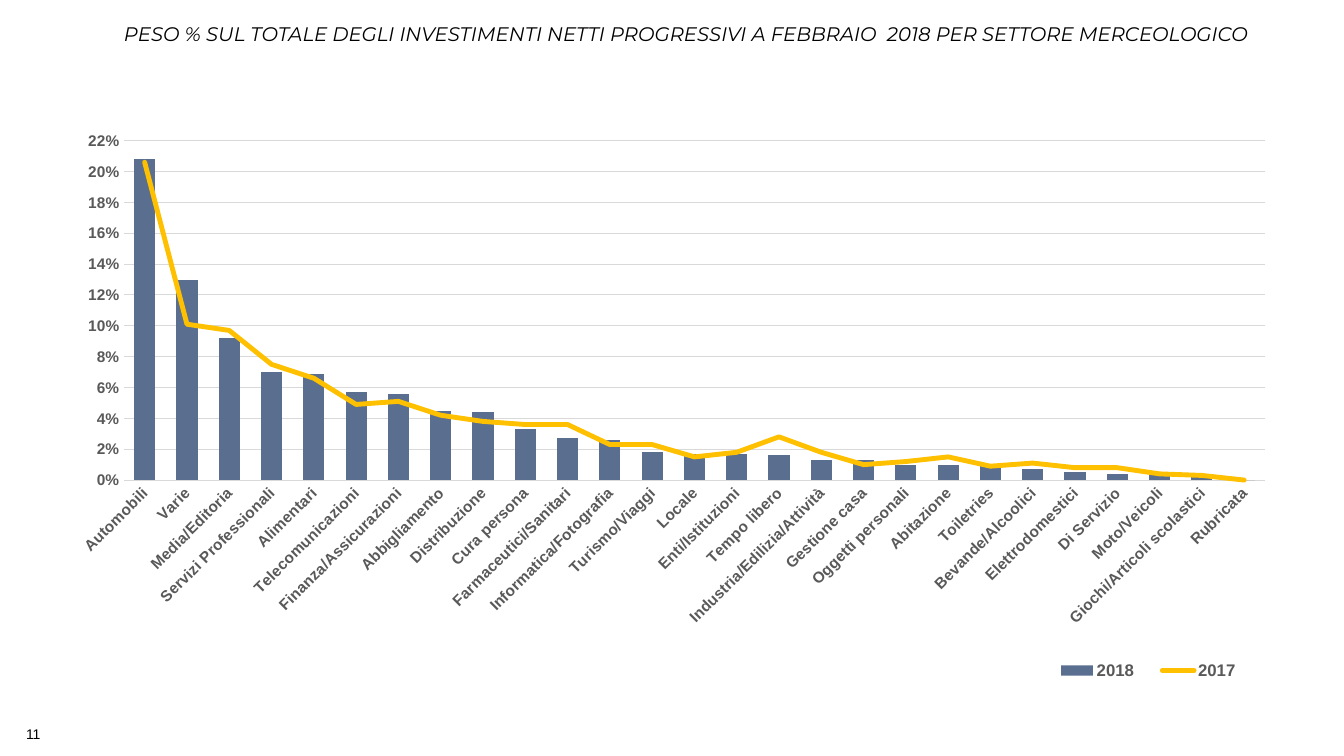
from copy import deepcopy

from pptx import Presentation
from pptx.chart.data import CategoryChartData
from pptx.dml.color import RGBColor
from pptx.enum.chart import XL_CHART_TYPE as ChartType, XL_LEGEND_POSITION as LegendPos
from pptx.enum.chart import XL_MARKER_STYLE as Marker, XL_TICK_MARK as Tick
from pptx.enum.text import MSO_ANCHOR as Anchor, PP_ALIGN as Align
from pptx.oxml import parse_xml
from pptx.oxml.ns import nsdecls, qn
from pptx.util import Inches, Pt

SECTORS = [
    ("Automobili", 0.208, 0.206), ("Varie", 0.13, 0.101),
    ("Media/Editoria", 0.092, 0.097), ("Servizi Professionali", 0.07, 0.075),
    ("Alimentari", 0.069, 0.066), ("Telecomunicazioni", 0.057, 0.049),
    ("Finanza/Assicurazioni", 0.056, 0.051), ("Abbigliamento", 0.045, 0.042),
    ("Distribuzione", 0.044, 0.038), ("Cura persona", 0.033, 0.036),
    ("Farmaceutici/Sanitari", 0.027, 0.036), ("Informatica/Fotografia", 0.026, 0.023),
    ("Turismo/Viaggi", 0.018, 0.023), ("Locale", 0.017, 0.015),
    ("Enti/Istituzioni", 0.017, 0.018), ("Tempo libero", 0.016, 0.028),
    ("Industria/Edilizia/Attività", 0.013, 0.018), ("Gestione casa", 0.013, 0.01),
    ("Oggetti personali", 0.01, 0.012), ("Abitazione", 0.01, 0.015),
    ("Toiletries", 0.009, 0.009), ("Bevande/Alcoolici", 0.007, 0.011),
    ("Elettrodomestici", 0.005, 0.008), ("Di Servizio", 0.004, 0.008),
    ("Moto/Veicoli", 0.003, 0.004), ("Giochi/Articoli scolastici", 0.002, 0.003),
    ("Rubricata", 0, 0),
]


def color(value):
    return RGBColor.from_string(value)


def apply(target, settings):
    for name, value in settings.items():
        setattr(target, name, value)


def manual_layout(x, y, w, h, inner=False):
    target = '<c:layoutTarget val="inner"/>' if inner else ""
    return parse_xml(
        f'<c:layout {nsdecls("c")}><c:manualLayout>{target}'
        '<c:xMode val="edge"/><c:yMode val="edge"/>'
        f'<c:x val="{x}"/><c:y val="{y}"/><c:w val="{w}"/><c:h val="{h}"/>'
        '</c:manualLayout></c:layout>')


class SlideBuilder:
    black, gray, grid = "000000", "595959", "D9D9D9"
    bar_color, line_color = "5A6F90", "FFC000"

    def __init__(self, page):
        self.page = page

    def style_font(self, font, size, fill, **settings):
        apply(font, {"name": "Arial", "size": Pt(size), **settings})
        font.color.rgb = color(fill)

    def text(self, content, place, size, align, margin=0.1, **settings):
        box = self.page.shapes.add_textbox(*map(Inches, place))
        frame = box.text_frame
        apply(frame, {"word_wrap": True, "vertical_anchor": Anchor.MIDDLE,
                      "margin_left": Inches(margin), "margin_right": Inches(margin),
                      "margin_top": Inches(margin / 2), "margin_bottom": Inches(margin / 2)})
        para = frame.paragraphs[0]
        para.alignment = align
        span = para.add_run()
        span.text = content
        self.style_font(span.font, size, self.black, **settings)

    def combo_chart(self, rows, names, place):
        data = CategoryChartData(number_format="0%")
        labels, *columns = zip(*rows)
        data.categories = labels
        for name, values in zip(names, columns):
            data.add_series(name, values)
        chart = self.page.shapes.add_chart(
            ChartType.COLUMN_CLUSTERED, *map(Inches, place), data).chart
        chart.has_title = False
        self.style_font(chart.font, 10, self.black)
        self.move_last_series_to_line(chart)
        self.style_series(chart)
        self.style_axes(chart)
        self.style_legend(chart)

    def move_last_series_to_line(self, chart):
        bars = chart.plots[0]._element
        series = bars.findall(qn("c:ser"))[-1]
        for bar_only in series.findall(qn("c:invertIfNegative")):
            series.remove(bar_only)
        lines = parse_xml(f'<c:lineChart {nsdecls("c")}><c:grouping val="standard"/>'
                          '<c:varyColors val="0"/></c:lineChart>')
        lines.append(series)
        for axis_id in bars.findall(qn("c:axId")):
            lines.append(deepcopy(axis_id))
        bars.addnext(lines)

    def style_series(self, chart):
        bars, lines = chart.plots
        apply(bars, {"gap_width": 100, "vary_by_categories": False})
        fill = bars.series[0].format.fill
        fill.solid()
        fill.fore_color.rgb = color(self.bar_color)
        trend = lines.series[0]
        trend.smooth = False
        trend.marker.style = Marker.NONE
        self.style_line(trend.format.line, self.line_color, 3.5)
        trend._element.find(qn("c:spPr")).find(qn("a:ln")).set("cap", "rnd")

    def style_line(self, line, fill, width):
        line.color.rgb = color(fill)
        line.width = Pt(width)

    def style_axes(self, chart):
        for axis in (chart.category_axis, chart.value_axis):
            apply(axis, {"major_tick_mark": Tick.NONE, "minor_tick_mark": Tick.NONE})
            self.style_font(axis.tick_labels.font, 11, self.gray, bold=True)
        # Slanted sector names
        sectors = chart.category_axis
        self.style_line(sectors.format.line, self.grid, 0.75)
        sectors._element.find(qn("c:txPr")).find(qn("a:bodyPr")).set("rot", "-2700000")
        # Percentage scale
        scale = chart.value_axis
        apply(scale, {"minimum_scale": 0, "maximum_scale": 0.22, "major_unit": 0.02,
                      "has_major_gridlines": True})
        apply(scale.tick_labels, {"number_format": "0%", "number_format_is_linked": False})
        scale.format.line.fill.background()
        self.style_line(scale.major_gridlines.format.line, self.grid, 0.75)

    def style_legend(self, chart):
        chart.has_legend = True
        legend = chart.legend
        apply(legend, {"position": LegendPos.BOTTOM, "include_in_layout": False})
        self.style_font(legend.font, 12, self.gray, bold=True)
        for old in legend._element.findall(qn("c:layout")):
            legend._element.remove(old)
        legend._element.insert(1, manual_layout(0.8, 0.93, 0.18, 0.06))
        area = chart._chartSpace.chart.plotArea
        for old in area.findall(qn("c:layout")):
            area.remove(old)
        area.insert(0, manual_layout(0.05, 0.075, 0.936, 0.567, inner=True))


def main():
    deck = Presentation()
    deck.slide_width, deck.slide_height = Inches(13.33), Inches(7.5)
    slide = SlideBuilder(deck.slides.add_slide(deck.slide_layouts[6]))

    # Heading
    slide.text("PESO % SUL TOTALE DEGLI INVESTIMENTI NETTI PROGRESSIVI A FEBBRAIO  2018 "
               "PER SETTORE MERCEOLOGICO", (0.53, 0.09, 12.56, 0.48), 14, Align.CENTER,
               margin=0, name="Montserrat", italic=True)
    # Sector shares by year
    slide.combo_chart(SECTORS, ("2018", "2017"), (0.62, 0.95, 12.1, 5.94))
    # Page number
    slide.text("11", (-0.13, 7.08, 0.63, 0.4), 10, Align.RIGHT)

    deck.save("out.pptx")


if __name__ == "__main__":
    main()
